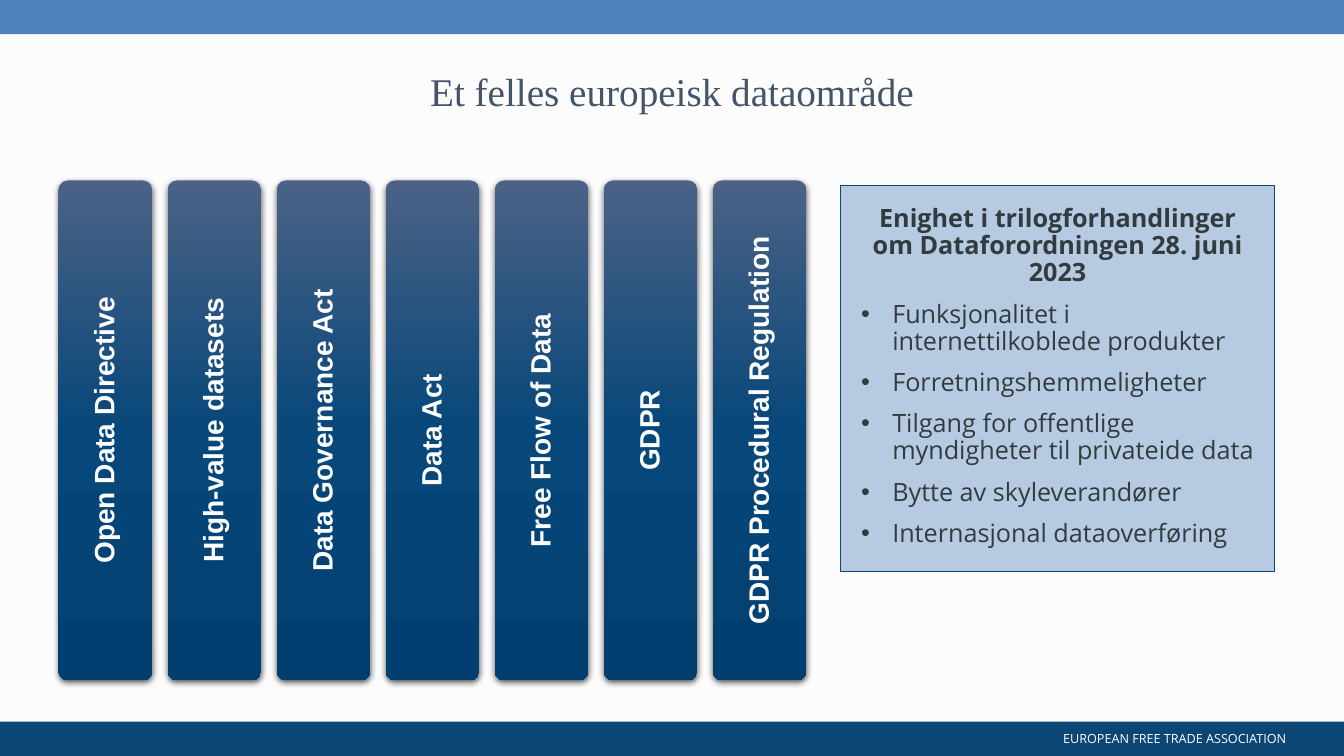
"""Builds the slide on a common European data area."""
from copy import deepcopy

from pptx import Presentation
from pptx.dml.color import RGBColor as RGB
from pptx.enum.shapes import MSO_SHAPE as Shape
from pptx.enum.text import MSO_ANCHOR as Anchor, PP_ALIGN as Align
from pptx.oxml.ns import qn
from pptx.util import Inches, Pt
from lxml.etree import SubElement

COLOURS = {
    "page": "FCFCFC", "navy": "0C4674", "blue": "4F82BA", "title": "44546A",
    "body": "323B3F", "white": "FFFFFF", "shadow": "000000",
}
GRADIENT = {0: "4B6286", 0.5: "074779", 1: "013F70"}
WIDTH, HEIGHT = 13.33, 7.5
BAND = 0.34
BARS_LEFT, LAST_BAR_LEFT, BARS_TOP = 0.58, 7.07, 1.79
BAR_WIDTH, BAR_HEIGHT = 0.93, 4.96

ACTS = [
    "Open Data Directive", "High-value datasets", "Data Governance Act",
    "Data Act", "Free Flow of Data", "GDPR", "GDPR Procedural Regulation",
]
HEADING = "Enighet i trilogforhandlinger om Dataforordningen 28. juni 2023"
POINTS = [
    "Funksjonalitet i internettilkoblede produkter",
    "Forretningshemmeligheter",
    "Tilgang for offentlige myndigheter til privateide data",
    "Bytte av skyleverandører",
    "Internasjonal dataoverføring",
]


def add_block(kind, left, top, width, height, colour=None):
    block = slide.shapes.add_shape(
        kind, *map(Inches, (left, top, width, height)))
    block.shadow.inherit = False
    block.line.fill.background()
    if colour:
        block.fill.solid()
        block.fill.fore_color.rgb = RGB.from_string(COLOURS[colour])
    else:
        block.fill.background()
    block.text_frame.word_wrap = True
    block.text_frame.vertical_anchor = Anchor.TOP
    return block


def write(paragraph, text, colour, align=Align.CENTER, spacing=0.9, **font):
    paragraph.alignment = align
    paragraph.line_spacing = spacing
    run = paragraph.add_run()
    run.text = text
    run.font.color.rgb = RGB.from_string(COLOURS[colour])
    for attribute, value in font.items():
        setattr(run.font, attribute, value)


deck = Presentation()
deck.slide_width, deck.slide_height = Inches(WIDTH), Inches(HEIGHT)
slide = deck.slides.add_slide(deck.slide_layouts[6])
slide.background.fill.solid()
slide.background.fill.fore_color.rgb = RGB.from_string(COLOURS["page"])

add_block(Shape.RECTANGLE, 0, HEIGHT - BAND, WIDTH, BAND, "navy")
add_block(Shape.RECTANGLE, 0, 0, WIDTH, BAND, "blue")

LABELS = [
    ("EUROPEAN FREE TRADE ASSOCIATION", (9.97, 7.2, 3.36, 0.25),
     "white", 1, {"name": "Open Sans", "size": Pt(9)}),
    ("Et felles europeisk dataområde", (0.34, 0.67, 12.65, 0.98),
     "title", 0.9, {"name": "Times New Roman", "size": Pt(28)}),
]
for text, place, colour, spacing, font in LABELS:
    label = slide.shapes.add_textbox(*map(Inches, place)).text_frame
    label.word_wrap = True
    write(label.paragraphs[0], text, colour, spacing=spacing, **font)

panel = add_block(Shape.RECTANGLE, 8.34, 1.84, 4.3, 3.83, "blue")
tint = panel._element.spPr.find(qn("a:solidFill"))[0]
SubElement(tint, qn("a:alpha"), val="40000")
panel.line.color.rgb = RGB.from_string(COLOURS["navy"])
panel.line.width = Pt(0.75)
agreement = panel.text_frame
for side in ("left", "top", "right", "bottom"):
    setattr(agreement, f"margin_{side}", Inches(0.2))
body_font = {"name": "Open Sans", "size": Pt(18)}
write(agreement.paragraphs[0], HEADING, "body", bold=True, **body_font)
for text in POINTS:
    point = agreement.add_paragraph()
    point.space_before = Pt(10)
    write(point, text, "body", Align.LEFT, **body_font)
    layout = point._p.get_or_add_pPr()
    layout.set("marL", str(Inches(0.31)))
    layout.set("indent", str(-Inches(0.31)))
    SubElement(layout, qn("a:buFont"), typeface="Arial")
    SubElement(layout, qn("a:buChar"), char="•")

pitch = (LAST_BAR_LEFT - BARS_LEFT) / (len(ACTS) - 1)
for column, act in enumerate(ACTS):
    bar = add_block(Shape.ROUNDED_RECTANGLE, BARS_LEFT + column * pitch,
                    BARS_TOP, BAR_WIDTH, BAR_HEIGHT)
    bar.adjustments[0] = 0.1
    bar.fill.gradient()
    bar.fill.gradient_angle = 270
    stops = bar._element.spPr.find(qn("a:gradFill")).find(qn("a:gsLst"))
    stops.insert(1, deepcopy(stops[0]))
    for stop, (position, colour) in zip(bar.fill.gradient_stops, GRADIENT.items()):
        stop.position = position
        stop.color.rgb = RGB.from_string(colour)
    effects = bar._element.spPr.find(qn("a:effectLst"))
    shadow = SubElement(effects, qn("a:outerShdw"), blurRad=str(Pt(4.5)),
                        dist=str(Pt(1.5)), dir="5400000", rotWithShape="0")
    shade = SubElement(shadow, qn("a:srgbClr"), val=COLOURS["shadow"])
    SubElement(shade, qn("a:alpha"), val="63000")
    bar.text_frame.vertical_anchor = Anchor.MIDDLE
    bar.text_frame._txBody.bodyPr.set("vert", "vert270")
    write(bar.text_frame.paragraphs[0], act, "white",
          name="Arial", size=Pt(20), bold=True)

deck.save("out.pptx")
